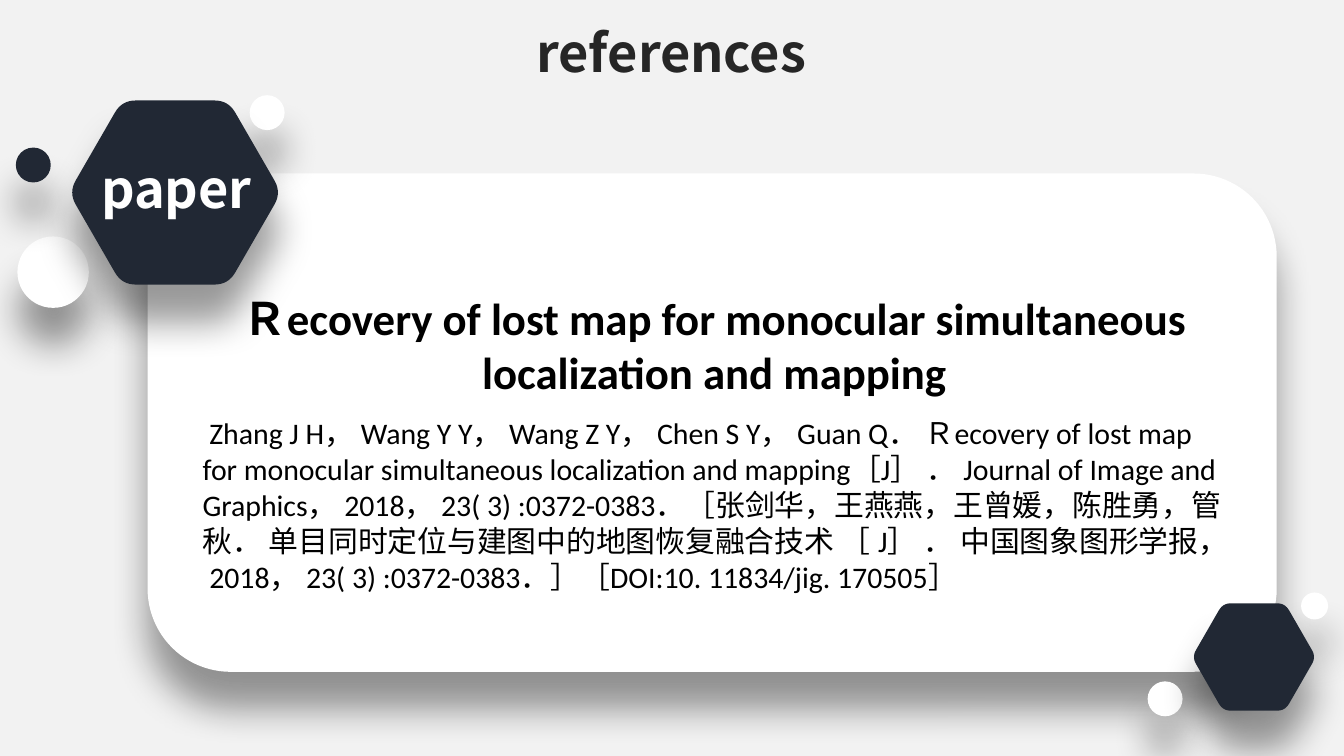
"""Build the references slide: one paper citation on a rounded card."""
from itertools import chain
from math import cos, radians, sin, sqrt

from lxml import etree
from pptx import Presentation
from pptx import util as u
from pptx.dml.color import RGBColor
from pptx.enum import shapes, text
from pptx.oxml import ns

DARK, WHITE, BLACK = "212834", "FFFFFF", "000000"
CJK = "Noto Sans CJK SC"

CARD = (2.79, 3.28, 21.34, 9.42)
DOTS = [
    (0.33, 4.47, 1.35, WHITE),
    (0.3, 2.79, 0.66, DARK),
    (4.72, 1.8, 0.66, WHITE),
    (21.69, 12.88, 0.66, WHITE),
    (24.59, 11.2, 0.51, WHITE),
]
HEXAGONS = [(3.31, 3.64, 3.48), (23.7, 12.42, 2.03)]
CITATION = (
    " Zhang J H， Wang Y Y， Wang Z Y， Chen S Y， Guan Q． "
    "Ｒecovery of lost map for monocular simultaneous localization and mapping［J］ ． "
    "Journal of Image and Graphics， 2018， 23( 3) :0372-0383．"
    "［张剑华，王燕燕，王曾媛，陈胜勇，管秋． 单目同时定位与建图中的地图恢复融合技术 ［ J］ ． "
    "中国图象图形学报， 2018， 23( 3) :0372-0383．］［DOI:10. 11834/jig. 170505］"
)
TEXTS = [
    ("Ｒecovery of lost map for monocular simultaneous localization and mapping",
     dict(box=(3.58, 5.38, 19.84, 2.31), size=24, bold=True, center=True)),
    (CITATION, dict(box=(3.58, 7.72, 19.84, 3.68), size=16)),
    ("paper", dict(box=(1.52, 2.82, 3.63, 1.45), size=28, bold=True, center=True,
                   font=CJK, color=WHITE)),
    ("references", dict(box=(9.83, 0.25, 5.72, 1.45), size=28, bold=True, center=True,
                        font=CJK, color="262626", wrap=False)),
]


def rgb(value):
    return RGBColor.from_string(value)


def style(sp, color):
    sp.fill.solid()
    sp.fill.fore_color.rgb = rgb(color)
    sp.line.fill.background()
    sp.shadow.inherit = False
    effects = sp._element.spPr.find(ns.qn("a:effectLst"))
    shadow = etree.SubElement(
        effects, ns.qn("a:outerShdw"), blurRad=str(u.Pt(20)), dist=str(u.Pt(20)),
        dir="5400000", algn="t", rotWithShape="0")
    shade = etree.SubElement(shadow, ns.qn("a:srgbClr"), val=BLACK)
    etree.SubElement(shade, ns.qn("a:alpha"), val="40000")


def add_preset(s, kind, box, color):
    style(s.shapes.add_shape(kind, *map(u.Cm, box)), color)


def rounded_corner(before, corner, after, cut=0.13, steps=8):
    start, end = ([c + (n - c) * cut for c, n in zip(corner, near)]
                  for near in (before, after))
    for t in (i / steps for i in range(steps + 1)):
        yield tuple(u.Cm((1 - t) ** 2 * a + 2 * t * (1 - t) * c + t ** 2 * b)
                    for a, c, b in zip(start, corner, end))


def add_hexagon(s, cx, cy, height):
    side = height / sqrt(3)
    corners = [(cx + side * cos(radians(a)), cy + side * sin(radians(a)))
               for a in range(0, 360, 60)]
    points = list(chain.from_iterable(
        rounded_corner(corners[i - 1], corners[i], corners[(i + 1) % 6]) for i in range(6)))
    outline = s.shapes.build_freeform(*points[0])
    outline.add_line_segments(points[1:], close=True)
    style(outline.convert_to_shape(), DARK)


def add_text(s, content, *, box, size, bold=False, center=False,
             font="Calibri", color=BLACK, wrap=True):
    tf = s.shapes.add_textbox(*map(u.Cm, box)).text_frame
    tf.word_wrap = wrap
    tf.auto_size = text.MSO_AUTO_SIZE.SHAPE_TO_FIT_TEXT
    p = tf.paragraphs[0]
    p.alignment = text.PP_ALIGN.CENTER if center else text.PP_ALIGN.LEFT
    r = p.add_run()
    r.text = content
    r.font.name, r.font.size, r.font.bold = font, u.Pt(size), bold
    r.font.color.rgb = rgb(color)


def main():
    prs = Presentation()
    prs.slide_width, prs.slide_height = u.Cm(25.4), u.Cm(14.29)
    s = prs.slides.add_slide(prs.slide_layouts[6])
    s.background.fill.solid()
    s.background.fill.fore_color.rgb = rgb("F2F2F2")
    add_preset(s, shapes.MSO_SHAPE.ROUNDED_RECTANGLE, CARD, WHITE)
    for x, y, size, color in DOTS:
        add_preset(s, shapes.MSO_SHAPE.OVAL, (x, y, size, size), color)
    for hexagon in HEXAGONS:
        add_hexagon(s, *hexagon)
    for content, options in TEXTS:
        add_text(s, content, **options)
    prs.save("out.pptx")


if __name__ == "__main__":
    main()
